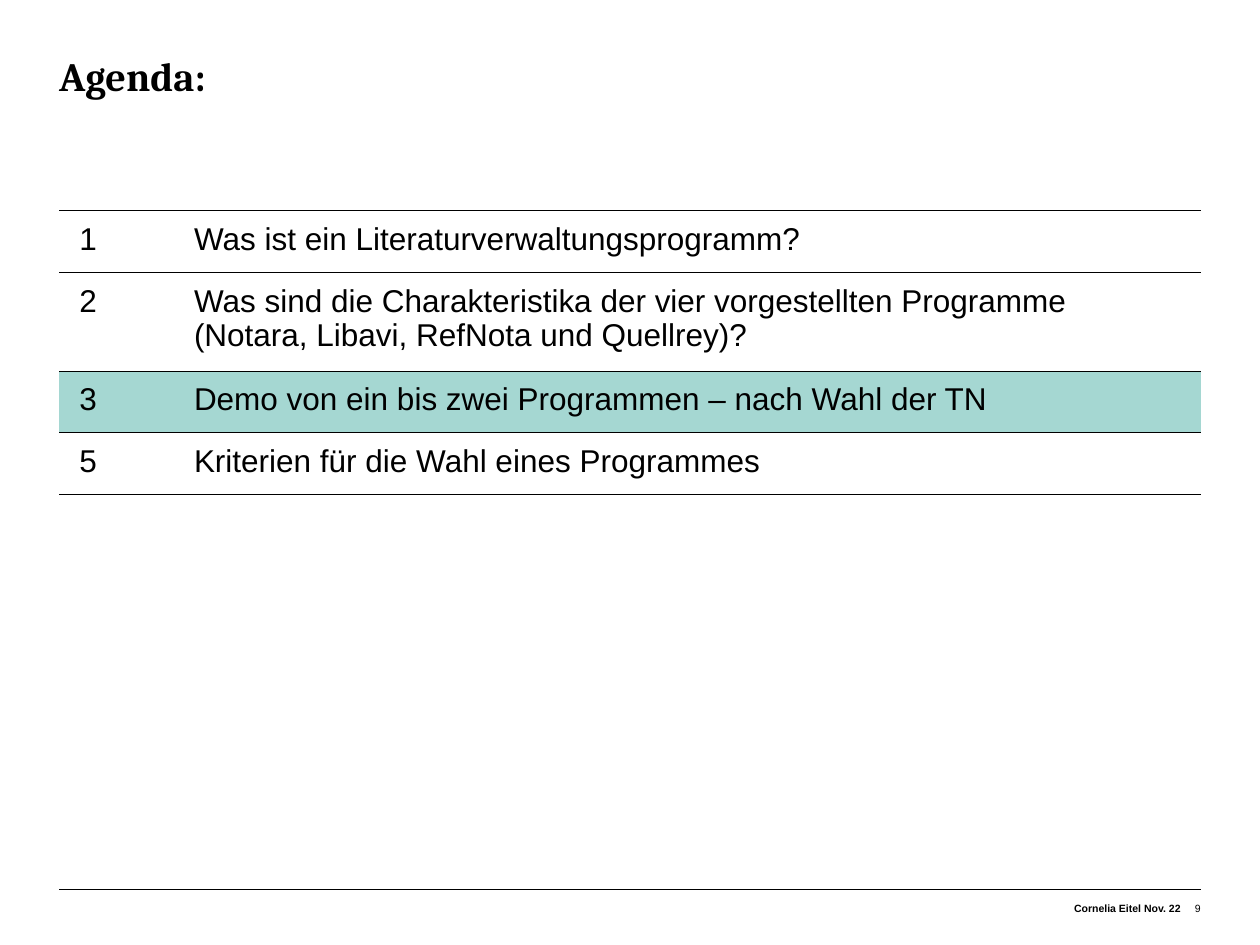
import pptx
import pptx.dml.color
import pptx.enum.shapes
import pptx.enum.text
import pptx.oxml
import pptx.oxml.ns
import pptx.util
from lxml import etree

Pt = pptx.util.Pt
RIGHT = pptx.enum.text.PP_ALIGN.RIGHT
COLORS = {"ink": "000000", "paper": "FFFFFF", "current": "A5D7D2"}
LEFT, WIDTH = 33.84, 652.32
AGENDA = [
    ("1", "Was ist ein Literaturverwaltungsprogramm?"),
    ("2", "Was sind die Charakteristika der vier vorgestellten Programme "
          "(Notara, Libavi, RefNota und Quellrey)?"),
    ("3", "Demo von ein bis zwei Programmen – nach Wahl der TN"),
    ("5", "Kriterien für die Wahl eines Programmes"),
]
CURRENT_TOPIC = "3"


def rgb(name):
    return pptx.dml.color.RGBColor.from_string(COLORS[name])


def write(frame, text, paragraph_format=None, **font):
    paragraph = frame.paragraphs[0]
    for key, value in (paragraph_format or {}).items():
        setattr(paragraph, key, value)
    run = paragraph.add_run()
    run.text = text
    for key, value in font.items():
        setattr(run.font, key, value)
    run.font.color.rgb = rgb("ink")


def add_text(slide, box, text, paragraph_format, top_inset=0, **font):
    frame = slide.shapes.add_textbox(*map(Pt, box)).text_frame
    margins = {"margin_left": 0, "margin_top": Pt(top_inset),
               "margin_right": 0, "margin_bottom": 0}
    for key, value in margins.items():
        setattr(frame, key, value)
    frame.word_wrap = True
    write(frame, text, paragraph_format, **font)


def rule_cell(cell):
    """Draw thin lines above and below a cell, none at its sides."""
    properties = cell._tc.get_or_add_tcPr()
    namespace = pptx.oxml.ns.nsdecls("a")
    line = ('<a:solidFill><a:srgbClr val="%s"/></a:solidFill>'
            % COLORS["ink"])
    sides = {"lnL": "<a:noFill/>", "lnR": "<a:noFill/>", "lnT": line, "lnB": line}
    for position, (side, paint) in enumerate(sides.items()):
        properties.insert(position, pptx.oxml.parse_xml(
            f'<a:{side} {namespace} w="{Pt(0.5)}">{paint}</a:{side}>'))


def add_agenda(slide, box, number_width=65.52, row_height=29.52):
    left, top, width, height = box
    table = slide.shapes.add_table(len(AGENDA), 2, *map(Pt, box)).table
    table.first_row = table.horz_banding = False
    table.columns[0].width = Pt(number_width)
    table.columns[1].width = Pt(width - number_width)
    cell_format = {"margin_left": Pt(11.52), "margin_right": Pt(11.52),
                   "margin_top": Pt(7.2), "margin_bottom": Pt(7.2)}
    for row, topic in zip(table.rows, AGENDA):
        row.height = Pt(row_height)
        fill = "current" if topic[0] == CURRENT_TOPIC else "paper"
        for cell, text in zip(row.cells, topic):
            for key, value in cell_format.items():
                setattr(cell, key, value)
            cell.fill.solid()
            cell.fill.fore_color.rgb = rgb(fill)
            rule_cell(cell)
            write(cell.text_frame, text, {"line_spacing": 0.97},
                  name="Arial", size=Pt(18))


def add_footer(slide, box, number_width=11.52, text_offset=5.76):
    left, top, width, height = box
    straight = pptx.enum.shapes.MSO_CONNECTOR.STRAIGHT
    rule = slide.shapes.add_connector(
        straight, Pt(left), Pt(top), Pt(left + width), Pt(top))
    rule.line.width = Pt(0.25)
    rule.line.color.rgb = rgb("ink")
    etree.SubElement(rule._element.spPr, pptx.oxml.ns.qn("a:effectLst"))

    number_left = left + width - number_width
    author_width = 150.48
    parts = [
        ("Cornelia Eitel Nov. 22", number_left - author_width, author_width, True),
        ("9", number_left, number_width, False),
    ]
    for text, part_left, part_width, bold in parts:
        part_box = (part_left, top + text_offset, part_width, height - text_offset)
        add_text(slide, part_box, text, {"alignment": RIGHT}, top_inset=1.44,
                 name="Arial", size=Pt(6), bold=bold)


def main():
    deck = pptx.Presentation()
    deck.slide_width, deck.slide_height = Pt(720), Pt(540)
    slide = deck.slides.add_slide(deck.slide_layouts[6])
    add_text(slide, (LEFT, 31.68, WIDTH, 59.76), "Agenda:",
             {"line_spacing": Pt(25)}, name="Cambria", size=Pt(23), bold=True)
    add_agenda(slide, (LEFT, 120.24, WIDTH, 118.08))
    add_footer(slide, (LEFT, 508.32, WIDTH, 20.16))
    deck.save("out.pptx")


if __name__ == "__main__":
    main()
